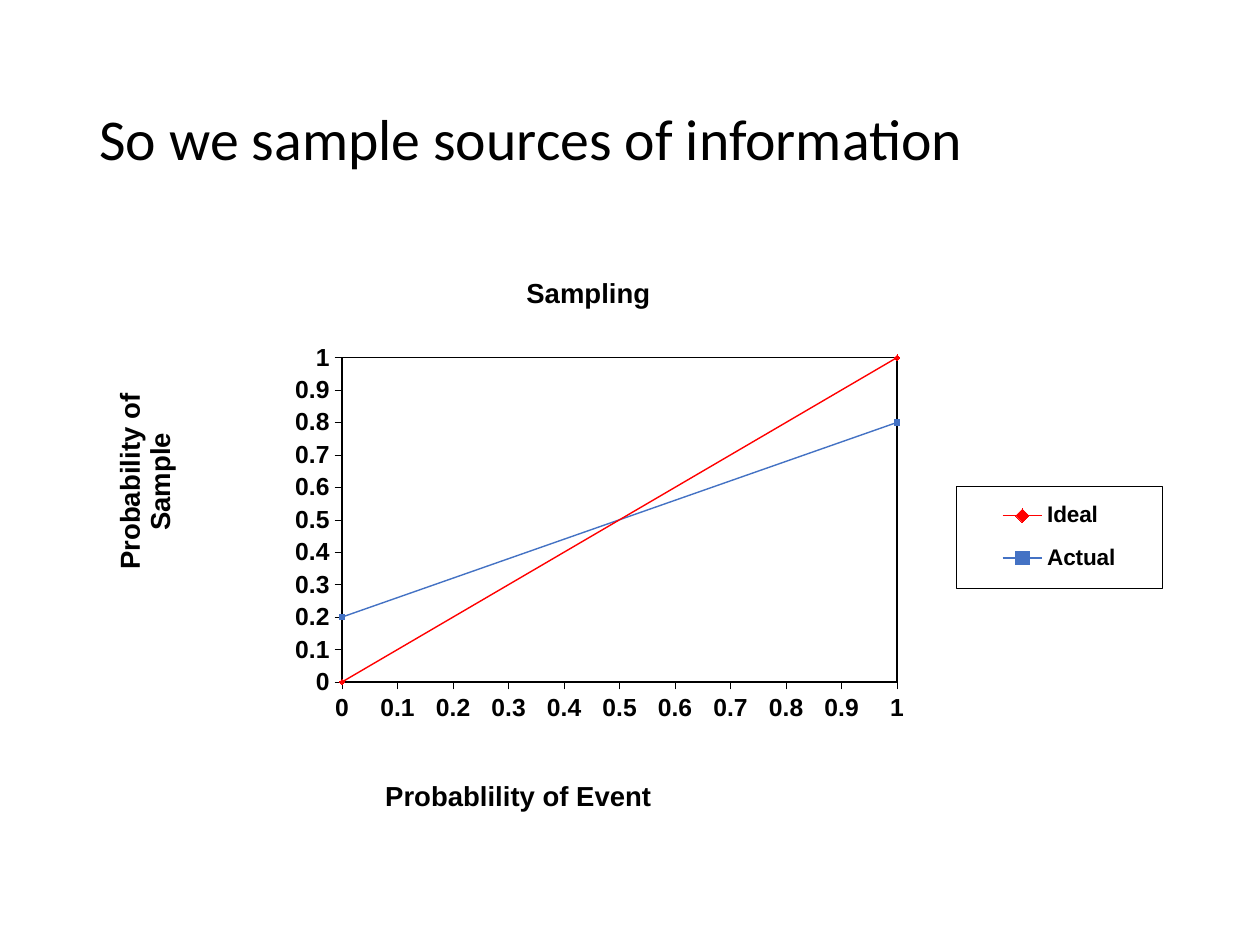
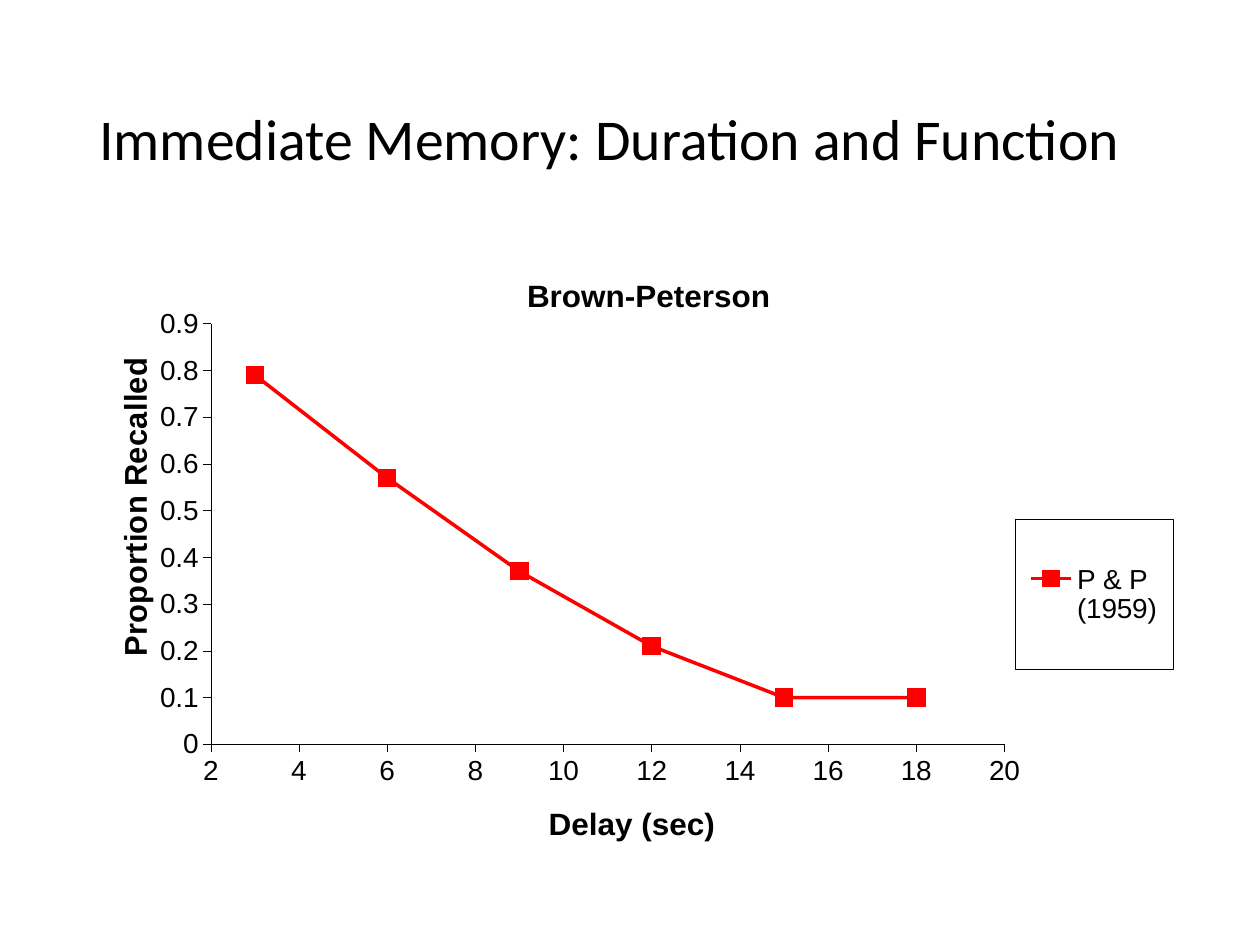
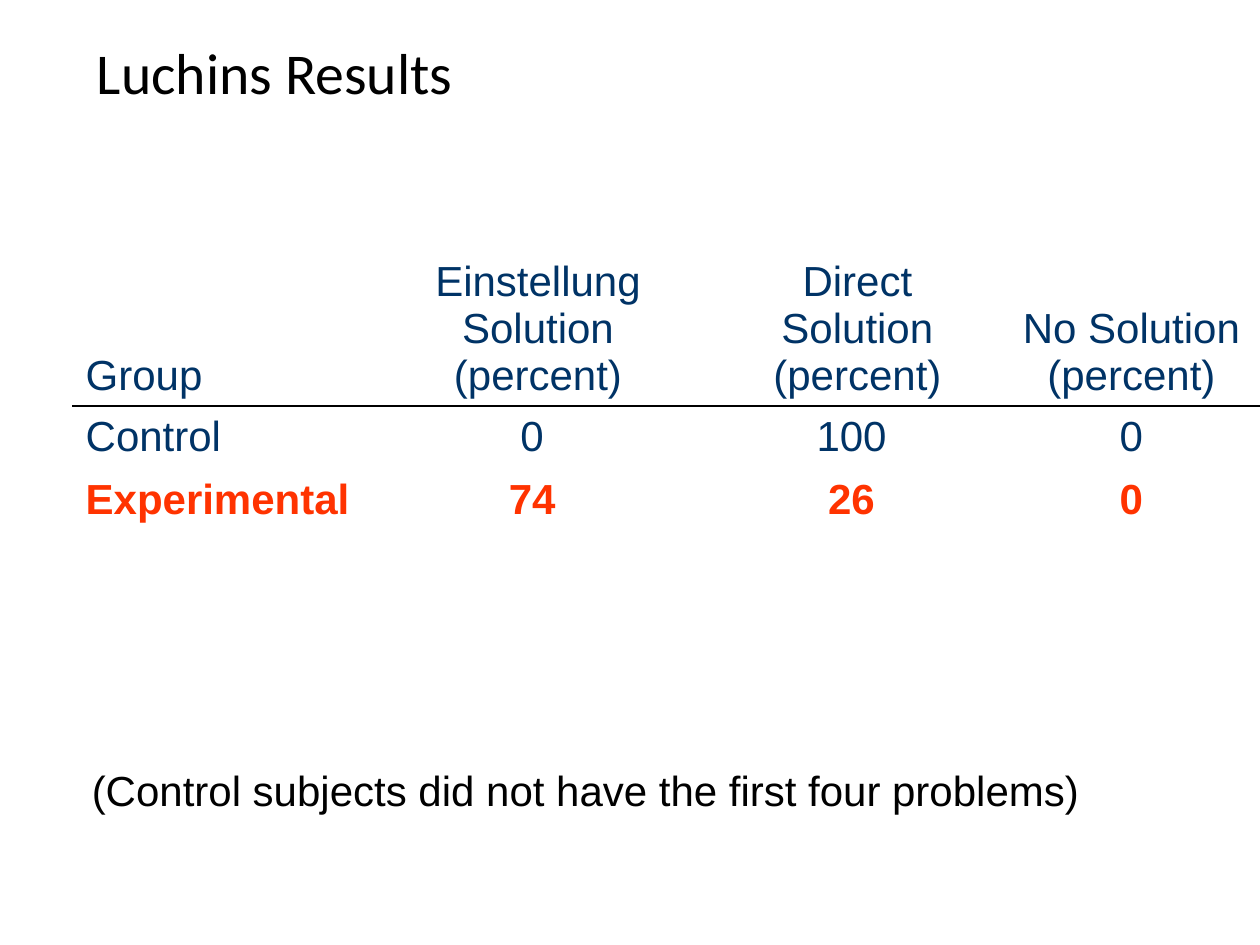
import pptx
import pptx.chart.data
import pptx.dml.color
import pptx.enum.chart
import pptx.enum.text
import pptx.oxml
import pptx.oxml.ns
import pptx.util

# Grid: 100 columns by 75 rows of square units
COLUMNS, ROWS = 100, 75
UNIT = pptx.util.Inches(0.1)

# Shared look
BLACK, RED, BLUE, NAVY, ORANGE = "000000", "FF0000", "4472C4", "003366", "FF3300"
TITLE_FONT, BODY_FONT = "Calibri", "Arial"
TITLE_AREA = (6.9, 4, 86.2, 14.5)
CHART_AREA = (6.9, 20, 86.2, 47.6)
MIDDLE = pptx.enum.text.MSO_ANCHOR.MIDDLE
BOTTOM = pptx.enum.text.MSO_ANCHOR.BOTTOM


def color(code):
    return pptx.dml.color.RGBColor.from_string(code)


def grid(*lengths):
    return [round(length * UNIT) for length in lengths]


def set_values(target, values):
    for name, value in values.items():
        setattr(target, name, value)


def style_font(font, size, code=BLACK, bold=False, name=BODY_FONT):
    set_values(font, {"size": pptx.util.Pt(size), "bold": bold, "name": name})
    font.color.rgb = color(code)


def style_line(line, code, width):
    line.color.rgb = color(code)
    line.width = pptx.util.Pt(width)


def write(frame, text, size, **style):
    frame.text = text
    for para in frame.paragraphs:
        for span in para.runs:
            style_font(span.font, size, **style)


def add_text(page, area, text, size, wrap=True, anchor=None, spacing=None, **style):
    frame = page.shapes.add_textbox(*grid(*area)).text_frame
    set_values(frame, {"word_wrap": wrap, "vertical_anchor": anchor})
    write(frame, text, size, **style)
    frame.paragraphs[0].line_spacing = spacing


def add_title(page, text, area=TITLE_AREA):
    add_text(page, area, text, 33, anchor=MIDDLE, spacing=0.9, name=TITLE_FONT)


# Chart parts
def chart_xml(tag, content):
    spaces = pptx.oxml.ns.nsdecls("c", "a")
    return pptx.oxml.parse_xml(f"<c:{tag} {spaces}>{content}</c:{tag}>")


def outline_xml(width):
    return chart_xml("spPr", f'<a:noFill/><a:ln w="{pptx.util.Pt(width)}"><a:solidFill>'
                             f'<a:srgbClr val="{BLACK}"/></a:solidFill></a:ln>')


def place(element, shares, index=1, inner=False):
    """Put a chart part at shares (x, y and maybe w, h) of the chart's area."""
    for old in element.findall(pptx.oxml.ns.qn("c:layout")):
        element.remove(old)
    parts = '<c:layoutTarget val="inner"/>' if inner else ""
    parts += "".join(f'<c:{key}Mode val="edge"/>' for key in "xy")
    parts += "".join(f'<c:{key} val="{share}"/>' for key, share in zip("xywh", shares))
    element.insert(index, chart_xml("layout", f"<c:manualLayout>{parts}</c:manualLayout>"))


def add_chart_title(title, text, size, shares):
    write(title.text_frame, text, size, bold=True)
    place(title.element, shares)


def style_axis(axis, text, shares, limits, look):
    low, high, step = limits
    set_values(axis, {
        "minimum_scale": low, "maximum_scale": high, "major_unit": step,
        "has_major_gridlines": False, "has_title": True,
        "major_tick_mark": pptx.enum.chart.XL_TICK_MARK.OUTSIDE,
        "minor_tick_mark": pptx.enum.chart.XL_TICK_MARK.NONE})
    set_values(axis.tick_labels, {"number_format": "General", "number_format_is_linked": False})
    style_font(axis.tick_labels.font, look["tick_size"], bold=look["bold"])
    style_line(axis.format.line, BLACK, 0.25)
    add_chart_title(axis.axis_title, text, look["title_size"], shares)


def style_series(series, code, marker, marker_size, width):
    style_line(series.format.line, code, width)
    set_values(series.marker, {"style": marker, "size": marker_size})
    series.marker.format.fill.solid()
    series.marker.format.fill.fore_color.rgb = color(code)
    style_line(series.marker.format.line, code, 0.75)


def add_legend(chart, shares, look):
    chart.has_legend = True
    set_values(chart.legend, {"position": pptx.enum.chart.XL_LEGEND_POSITION.RIGHT,
                              "include_in_layout": False})
    style_font(chart.legend.font, look["legend_size"], bold=look["bold"])
    element = chart.element.find(".//" + pptx.oxml.ns.qn("c:legend"))
    place(element, shares)
    element.find(pptx.oxml.ns.qn("c:txPr")).addprevious(outline_xml(0.25))


def add_scatter(page, title, x_axis, y_axis, legend, plot, series, look):
    data = pptx.chart.data.XyChartData()
    for name, points, *_ in series:
        row = data.add_series(name)
        for x, y in points:
            row.add_data_point(x, y)
    kind = pptx.enum.chart.XL_CHART_TYPE.XY_SCATTER_LINES
    chart = page.shapes.add_chart(kind, *grid(*CHART_AREA), data).chart
    style_font(chart.font, look["tick_size"], bold=look["bold"])
    chart.has_title = True
    add_chart_title(chart.chart_title, title[0], look["title_size"], title[1])
    style_axis(chart.category_axis, *x_axis, look)
    style_axis(chart.value_axis, *y_axis, look)
    body = chart.value_axis.axis_title.element.find(".//" + pptx.oxml.ns.qn("a:bodyPr"))
    body.set("rot", "-5400000")
    body.set("vert", "horz")
    chart.plots[0].vary_by_categories = False
    for drawn, (_, _, *style) in zip(chart.plots[0].series, series):
        style_series(drawn, *style)
    add_legend(chart, legend, look)
    area = chart.element.find(".//" + pptx.oxml.ns.qn("c:plotArea"))
    place(area, plot, index=0, inner=True)
    if look["frame"]:
        area.append(outline_xml(look["frame"]))


# Table parts
def add_rule(cell, side):
    line = (f'<a:{side} {pptx.oxml.ns.nsdecls("a")} w="{pptx.util.Pt(1)}"><a:solidFill>'
            f'<a:srgbClr val="{BLACK}"/></a:solidFill></a:{side}>')
    cell.fill.background()
    cell.fill  # the rule goes ahead of the fill
    cell._tc.get_or_add_tcPr().insert(0, pptx.oxml.parse_xml(line))


def add_table(page, left, top, widths, heights, rows, styles):
    area = grid(left, top, sum(widths), sum(heights))
    table = page.shapes.add_table(len(rows), len(widths), *area).table
    set_values(table, {"first_row": False, "horz_banding": False})
    for column, width in zip(table.columns, grid(*widths)):
        column.width = width
    for row, height in zip(table.rows, grid(*heights)):
        row.height = height
    for r, (texts, style) in enumerate(zip(rows, styles)):
        for c, text in enumerate(texts):
            cell = table.cell(r, c)
            cell.fill.background()
            cell.vertical_anchor = MIDDLE if r else BOTTOM
            write(cell.text_frame, text, 24, **style)
            if c:
                cell.text_frame.paragraphs[0].alignment = pptx.enum.text.PP_ALIGN.CENTER
            if r < 2:
                add_rule(cell, "lnT" if r else "lnB")


# Slides
def build_sampling(page):
    add_title(page, "So we sample sources of information")
    marker = pptx.enum.chart.XL_MARKER_STYLE
    add_scatter(
        page,
        title=("Sampling", (0.4, 0.03)),
        x_axis=("Probablility of Event", (0.27, 0.87), (0, 1, 0.1)),
        y_axis=("Probability of\nSample", (0.02, 0.23), (0, 1, 0.1)),
        legend=(0.8, 0.39, 0.19, 0.17),
        plot=(0.235, 0.176, 0.511, 0.541),
        series=[("Ideal", [(0, 0), (1, 1)], RED, marker.DIAMOND, 3, 0.8),
                ("Actual", [(0, 0.2), (1, 0.8)], BLUE, marker.SQUARE, 3, 0.8)],
        look={"title_size": 15.7, "tick_size": 14.1, "legend_size": 12.9,
              "bold": True, "frame": 1})


def build_memory(page):
    add_title(page, "Immediate Memory: Duration and Function")
    recalled = [0.79, 0.57, 0.37, 0.21, 0.1, 0.1]
    add_scatter(
        page,
        title=("Brown-Peterson", (0.4, 0.03)),
        x_axis=("Delay (sec)", (0.42, 0.93), (2, 20, 2)),
        y_axis=("Proportion Recalled", (0.02, 0.18), (0, 0.9, 0.1)),
        legend=(0.855, 0.455, 0.146, 0.255),
        plot=(0.114, 0.122, 0.731, 0.716),
        series=[("P & P (1959)", list(zip(range(3, 19, 3), recalled)), RED,
                 pptx.enum.chart.XL_MARKER_STYLE.SQUARE, 10, 2)],
        look={"title_size": 18, "tick_size": 16, "legend_size": 16,
              "bold": False, "frame": None})


def build_luchins(page):
    add_title(page, "Luchins Results", (6.7, 1.7, 90, 8.7))
    add_table(
        page, 5.8, 19.2, widths=(23.1, 27.6, 23.1, 20.4), heights=(13, 5, 5),
        rows=[("Group", "Einstellung Solution (percent)", "Direct Solution (percent)",
               "No Solution (percent)"),
              ("Control", "0 ", "100 ", "0"),
              ("Experimental", "74 ", "26 ", "0")],
        styles=[{"code": NAVY}, {"code": NAVY}, {"code": ORANGE, "bold": True}])
    add_text(page, (6.3, 60.2, 81.2, 5),
             "(Control subjects did not have the first four problems)", 24, wrap=False)


def main():
    deck = pptx.Presentation()
    deck.slide_width, deck.slide_height = grid(COLUMNS, ROWS)
    for build in (build_sampling, build_memory, build_luchins):
        build(deck.slides.add_slide(deck.slide_layouts[6]))
    deck.save("out.pptx")


if __name__ == "__main__":
    main()
